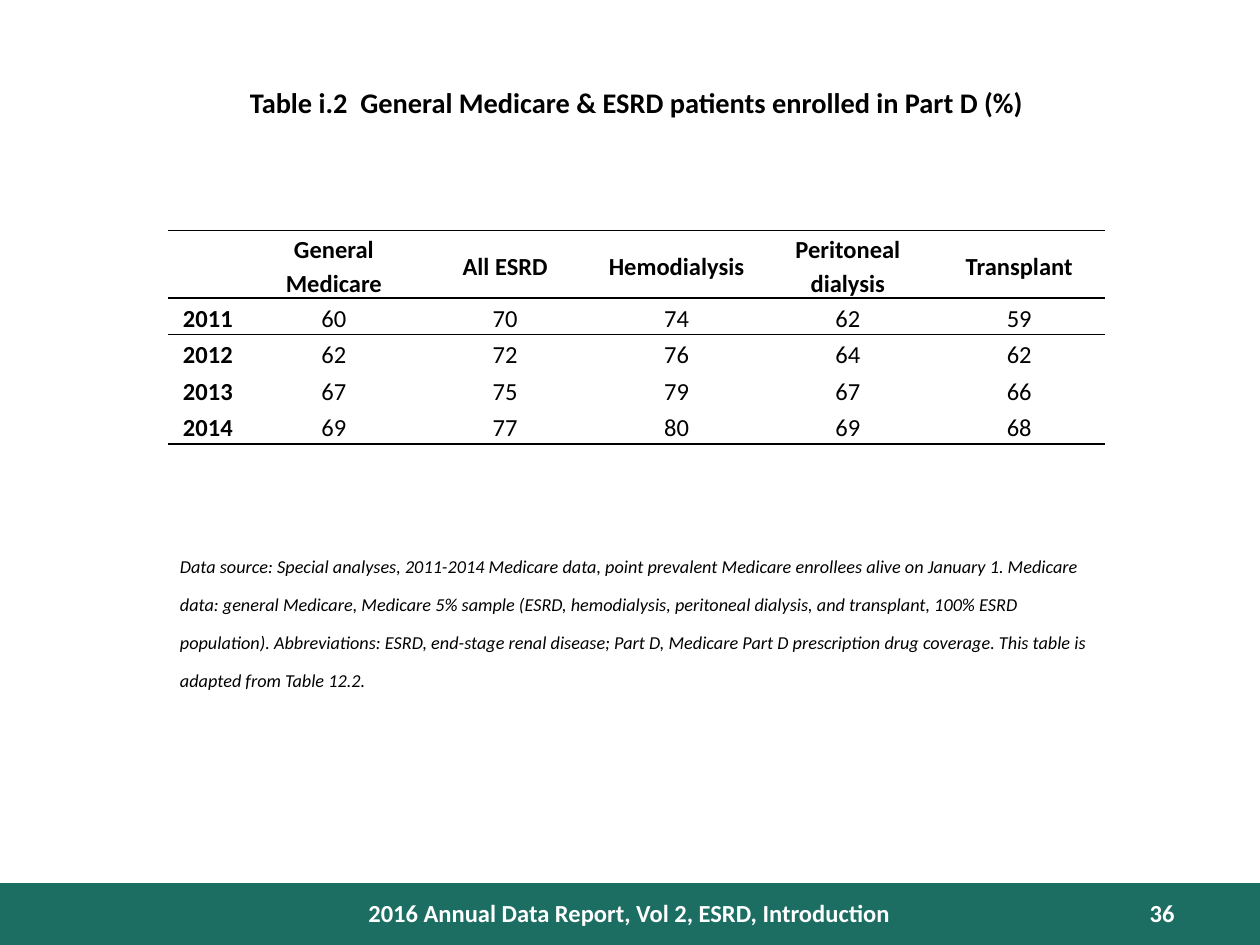
import pptx
import pptx.util
import pptx.dml.color
import pptx.enum.shapes
import pptx.enum.text
import pptx.oxml
from lxml import etree
from pptx.util import Inches

COLORS = {"band": "1C6E62", "text": "000000", "light": "FFFFFF", "rule": "000000"}
FONT = "Calibri"
ALIGN = pptx.enum.text.PP_ALIGN
NO_STYLE = "{2D5ABB26-0587-4C30-8999-92F81FD0307C}"

# Content
TITLE = "Table i.2  General Medicare & ESRD patients enrolled in Part D (%)"
ROWS = [
    ("", "General Medicare", "All ESRD", "Hemodialysis", "Peritoneal dialysis", "Transplant"),
    ("2011", "60", "70", "74", "62", "59"),
    ("2012", "62", "72", "76", "64", "62"),
    ("2013", "67", "75", "79", "67", "66"),
    ("2014", "69", "77", "80", "69", "68"),
]
NOTE = (
    "Data source: Special analyses, 2011-2014 Medicare data, point prevalent Medicare "
    "enrollees alive on January 1. Medicare data: general Medicare, Medicare 5% sample "
    "(ESRD, hemodialysis, peritoneal dialysis, and transplant, 100% ESRD population). "
    "Abbreviations: ESRD, end-stage renal disease; Part D, Medicare Part D prescription "
    "drug coverage. This table is adapted from Table 12.2."
)
FOOTER = "2016 Annual Data Report, Vol 2, ESRD, Introduction"
PAGE = "36"


def rgb(name):
    return pptx.dml.color.RGBColor.from_string(COLORS[name])


def write(tf, text, size=14, color="text", bold=False, italic=False,
          align=ALIGN.LEFT, spacing=None, baseline=None):
    tf.word_wrap = True
    p = tf.paragraphs[0]
    p.alignment = align
    if spacing:
        p.line_spacing = spacing
    r = p.add_run()
    r.text = text
    r.font.name, r.font.size = FONT, pptx.util.Pt(size)
    r.font.bold, r.font.italic = bold, italic
    r.font.color.rgb = rgb(color)
    if baseline:
        r.font._element.set("baseline", str(baseline * 1000))


def add_text(s, box, text, **fmt):
    sp = s.shapes.add_textbox(*map(Inches, box))
    write(sp.text_frame, text, **fmt)


def add_rule(cell, side):
    """Draw a 1 pt rule on one side (T or B) of a cell."""
    ln = etree.SubElement(cell._tc.get_or_add_tcPr(), pptx.oxml.ns.qn(f"a:ln{side}"),
                          w=str(pptx.util.Pt(1)))
    fill = etree.SubElement(ln, pptx.oxml.ns.qn("a:solidFill"))
    etree.SubElement(fill, pptx.oxml.ns.qn("a:srgbClr"), val=COLORS["rule"])


def add_data_table(s, left, top):
    widths = [0.64] + [1.36] * (len(ROWS[0]) - 1)
    heights = [0.53] + [0.29] * (len(ROWS) - 1)
    frame = s.shapes.add_table(len(ROWS), len(widths), Inches(left), Inches(top),
                               Inches(sum(widths)), Inches(sum(heights)))
    table = frame.table
    table.first_row = table.horz_banding = False
    table._tbl.tblPr.find(pptx.oxml.ns.qn("a:tableStyleId")).text = NO_STYLE
    for col, width in zip(table.columns, widths):
        col.width = Inches(width)
    for i, (row, height) in enumerate(zip(ROWS, heights)):
        table.rows[i].height = Inches(height)
        for j, text in enumerate(row):
            cell = table.cell(i, j)
            cell.margin_left = cell.margin_right = Inches(0.07)
            cell.margin_top = cell.margin_bottom = 0
            cell.vertical_anchor = pptx.enum.text.MSO_ANCHOR.MIDDLE
            if i <= 1:
                add_rule(cell, "T")
            if i in (0, len(ROWS) - 1):
                add_rule(cell, "B")
            cell.fill.background()
            if text:
                write(cell.text_frame, text, bold=i == 0 or j == 0,
                      align=ALIGN.CENTER, spacing=1.15)


def main():
    prs = pptx.Presentation()
    prs.slide_width, prs.slide_height = Inches(10), Inches(7.5)
    s = prs.slides.add_slide(prs.slide_layouts[6])

    # Footer band
    band = s.shapes.add_shape(pptx.enum.shapes.MSO_SHAPE.RECTANGLE,
                              0, Inches(7.01), Inches(10), Inches(0.49))
    band.shadow.inherit = False
    band.fill.solid()
    band.fill.fore_color.rgb = rgb("band")
    band.line.fill.background()

    # Title, table and source note
    add_text(s, (0.05, 0.58, 10, 0.42), TITLE, size=28, bold=True,
             align=ALIGN.CENTER, baseline=30)
    add_data_table(s, 1.33, 1.83)
    add_text(s, (1.33, 4.33, 7.5, 0.91), NOTE, size=18, italic=True, baseline=30)

    # Footer text and page number
    add_text(s, (2.58, 7.08, 4.83, 0.33), FOOTER, color="light", bold=True,
             align=ALIGN.CENTER)
    add_text(s, (8.42, 7.08, 1, 0.3), PAGE, color="light", bold=True, align=ALIGN.RIGHT)

    prs.save("out.pptx")


if __name__ == "__main__":
    main()
